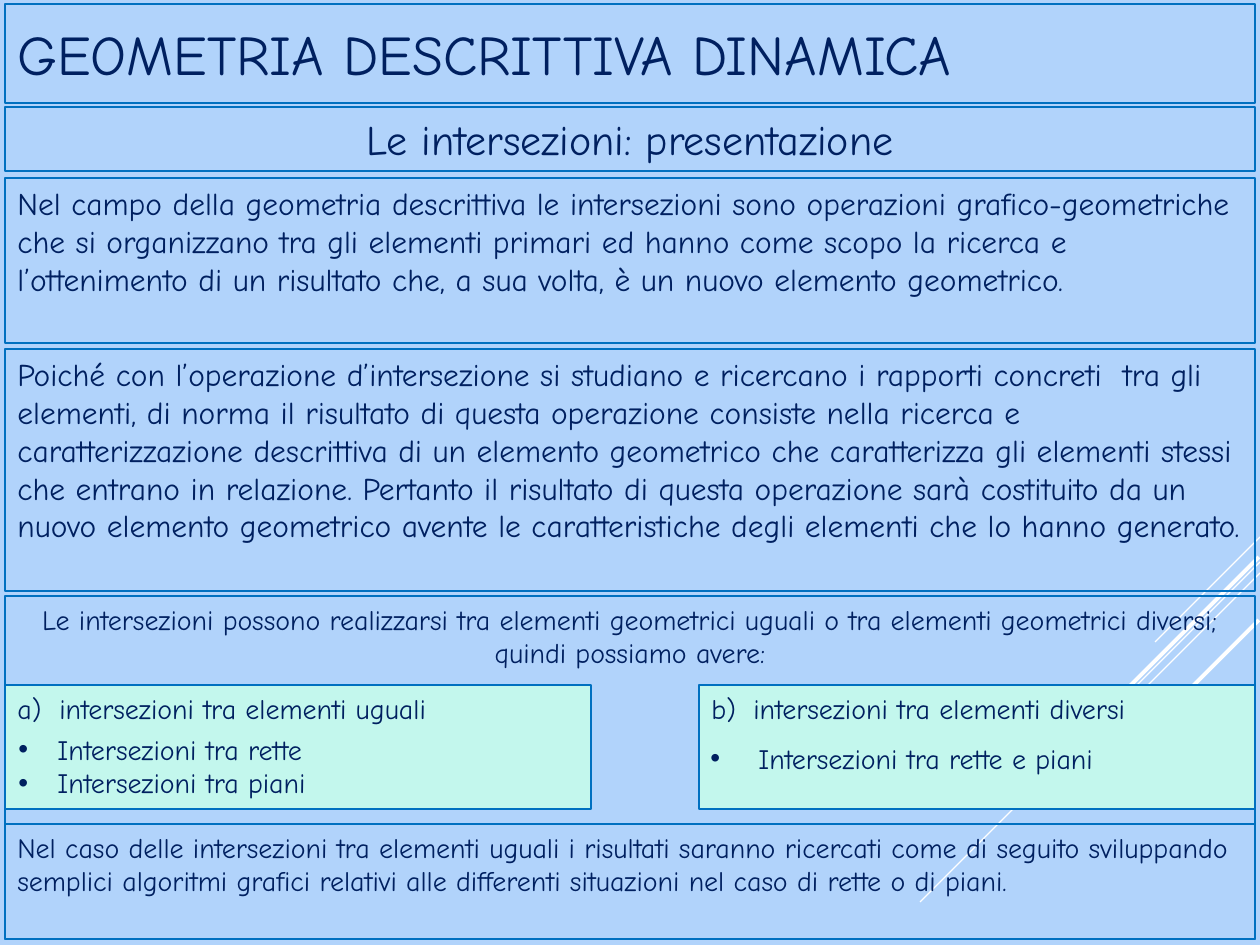
from lxml.etree import SubElement
from pptx import Presentation
from pptx.dml.color import RGBColor
from pptx.enum.shapes import MSO_CONNECTOR as Connector, MSO_SHAPE as Shape
from pptx.enum.text import MSO_ANCHOR as Anchor, PP_ALIGN as Align
from pptx.oxml.ns import qn
from pptx.util import Emu, Pt

FONT = "Comic Neue"
NAVY = RGBColor(0x00, 0x20, 0x60)
BLUE = RGBColor(0x00, 0x70, 0xC0)
SKY = RGBColor(0xB1, 0xD3, 0xFB)
MINT = RGBColor(0xC3, 0xF7, 0xED)
WHITE = RGBColor(0xFF, 0xFF, 0xFF)

PAGE_WIDTH, PAGE_HEIGHT = 1260, 945
LEFT, WIDTH = 5, 1250

INTRO = (
    "Nel campo della geometria descrittiva le intersezioni sono operazioni "
    "grafico-geometriche che si organizzano tra gli elementi primari ed hanno come scopo "
    "la ricerca e l’ottenimento di un risultato che, a sua volta, è un nuovo elemento "
    "geometrico."
)
RESULT = (
    "Poiché con l’operazione d’intersezione si studiano e ricercano i rapporti concreti  tra "
    "gli elementi, di norma il risultato di questa operazione consiste nella ricerca e "
    "caratterizzazione descrittiva di un elemento geometrico che caratterizza gli elementi "
    "stessi che entrano in relazione. Pertanto il risultato di questa operazione sarà "
    "costituito da un nuovo elemento geometrico avente le caratteristiche degli elementi "
    "che lo hanno generato."
)
CASES = (
    "Le intersezioni possono realizzarsi tra elementi geometrici uguali o tra elementi "
    "geometrici diversi; quindi possiamo avere:"
)
CLOSING = (
    "Nel caso delle intersezioni tra elementi uguali i risultati saranno ricercati come di "
    "seguito sviluppando semplici algoritmi grafici relativi alle differenti situazioni nel "
    "caso di rette o di piani."
)


def px(length):
    return Emu(round(length * 914400 / 126))


def write(frame, lines, size, align=Align.LEFT, anchor=Anchor.TOP, hang=0, bullet=False):
    """Fill a text frame, one paragraph a line; hang is the hanging indent in px."""
    frame.word_wrap = True
    frame.vertical_anchor = anchor
    for number, line in enumerate(lines):
        para = frame.add_paragraph() if number else frame.paragraphs[0]
        para.text = line
        para.alignment = align
        para.font.name = FONT
        para.font.size = Pt(size)
        para.font.color.rgb = NAVY
        props = para._p.get_or_add_pPr()
        if hang:
            props.set("marL", str(px(hang)))
            props.set("indent", str(-px(hang)))
        if bullet:
            mark_font = SubElement(props, qn("a:buFont"))
            mark_font.set("typeface", "Arial")
            SubElement(props, qn("a:buChar")).set("char", "•")
            props.append(props.find(qn("a:defRPr")))


def add_panel(page, box, text, size, fill=None, line_width=0.75, **style):
    panel = page.shapes.add_shape(Shape.RECTANGLE, *map(px, box))
    panel.shadow.inherit = False
    if fill is None:
        panel.fill.background()
    else:
        panel.fill.solid()
        panel.fill.fore_color.rgb = fill
    panel.line.color.rgb = BLUE
    panel.line.width = Pt(line_width)
    write(panel.text_frame, [text], size, **style)


def add_case(page, box, heading, items, list_offset, hang):
    """Green panel with a lettered heading and a bulleted list below it."""
    left, top, width, height = box
    add_panel(page, box, heading, 16, fill=MINT, hang=42)
    dx, dy = list_offset
    area = (left + dx, top + dy, width - 40, height - dy)
    listing = page.shapes.add_textbox(*map(px, area))
    write(listing.text_frame, items, 16, hang=hang, bullet=True)


def add_streaks(page, box):
    """Diagonal white lines, each given by its right end, its run and its weight."""
    left, top, width, _ = box
    right = left + width
    for inset, drop, run, weight in (
        (0, 0, 105, 0.75),
        (0, 25, 340, 0.75),
        (0, 36, 217, 0.75),
        (1, 20, 199, 2.25),
        (1, 83, 144, 2.25),
    ):
        x, y = right - inset, top + drop
        ends = map(px, (x, y, x - run, y + run))
        streak = page.shapes.add_connector(Connector.STRAIGHT, *ends)
        streak.line.color.rgb = WHITE
        streak.line.width = Pt(weight)
        SubElement(streak._element.spPr, qn("a:effectLst"))


def main():
    deck = Presentation()
    deck.slide_width, deck.slide_height = px(PAGE_WIDTH), px(PAGE_HEIGHT)
    page = deck.slides.add_slide(deck.slide_layouts[6])
    page.background.fill.solid()
    page.background.fill.fore_color.rgb = SKY

    add_streaks(page, (920, 537, 340, 366))
    add_panel(page, (LEFT, 4, WIDTH, 99), "GEOMETRIA DESCRITTIVA DINAMICA", 32,
              line_width=1, anchor=Anchor.MIDDLE)
    add_panel(page, (LEFT, 107, WIDTH, 64), "Le intersezioni: presentazione", 24,
              align=Align.CENTER)
    add_panel(page, (LEFT, 178, WIDTH, 165), INTRO, 18)
    add_panel(page, (LEFT, 349, WIDTH, 242), RESULT, 18)
    add_panel(page, (LEFT, 596, WIDTH, 343), CASES, 16, align=Align.CENTER)
    add_case(page, (LEFT, 685, 586, 124), "a)\tintersezioni tra elementi uguali",
             ["Intersezioni tra rette", "Intersezioni tra piani"], (1, 41), 39)
    add_case(page, (699, 685, 556, 124), "b)\tintersezioni tra elementi diversi",
             ["Intersezioni tra rette e piani"], (-1, 50), 48)
    add_panel(page, (LEFT, 824, WIDTH, 115), CLOSING, 16)
    deck.save("out.pptx")


if __name__ == "__main__":
    main()
